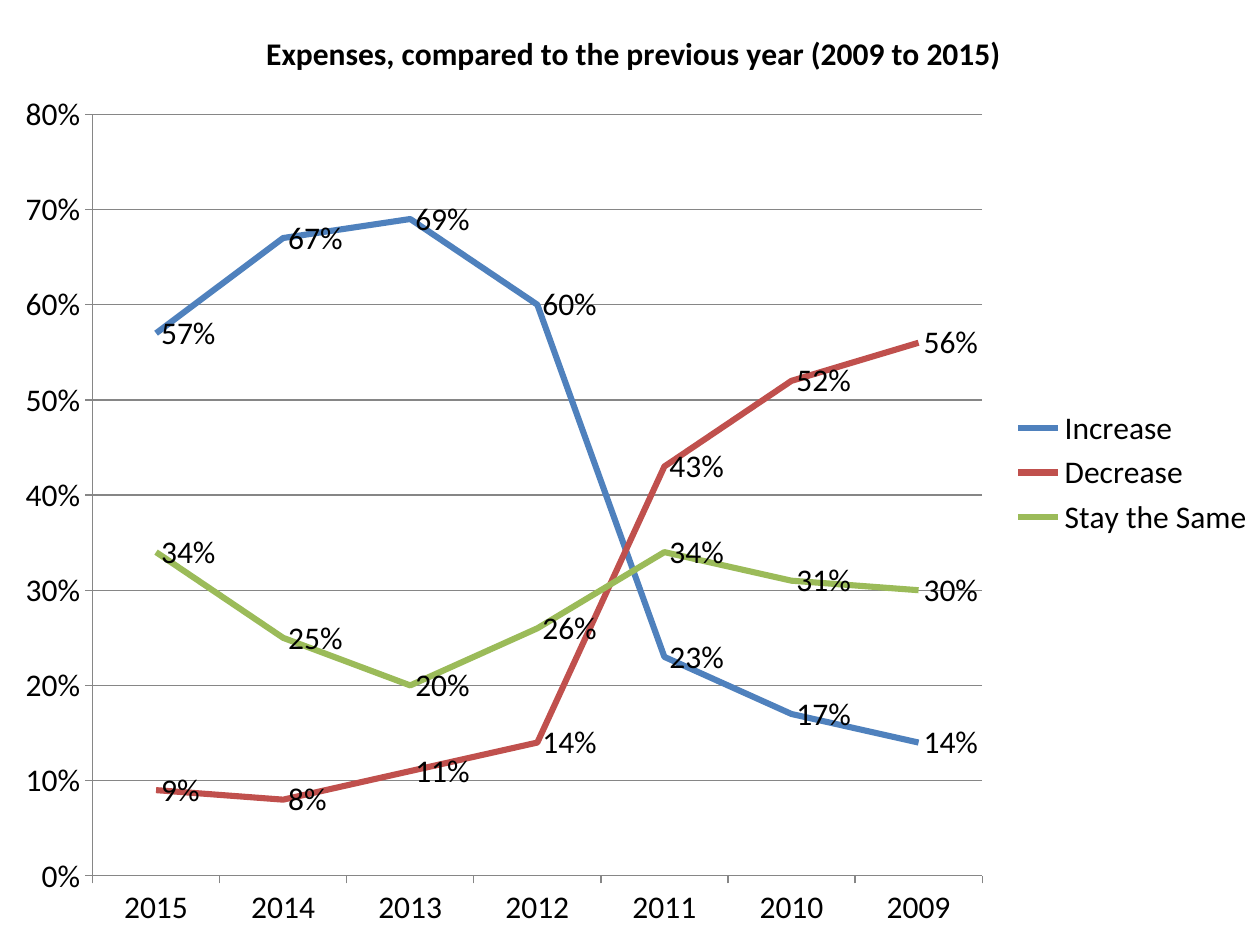
from dataclasses import dataclass
from lxml.etree import SubElement
from pptx import Presentation
from pptx.chart.data import CategoryChartData
from pptx.dml.color import RGBColor
from pptx.enum.chart import XL_CHART_TYPE, XL_LABEL_POSITION, XL_LEGEND_POSITION, XL_MARKER_STYLE, XL_TICK_MARK
from pptx.oxml.ns import qn
from pptx.util import Cm, Pt

COLORS = {
    "text": "000000",
    "axis": "868686",
    "Increase": "4F81BD",
    "Decrease": "C0504D",
    "Stay the Same": "9BBB59",
}
YEARS = [str(year) for year in range(2015, 2008, -1)]
EXPENSES = {
    "Increase": (0.57, 0.67, 0.69, 0.6, 0.23, 0.17, 0.14),
    "Decrease": (0.09, 0.08, 0.11, 0.14, 0.43, 0.52, 0.56),
    "Stay the Same": (0.34, 0.25, 0.2, 0.26, 0.34, 0.31, 0.3),
}


@dataclass
class SlideBuilder:
    """Holds the style and the current slide, and adds styled chart parts."""

    slide: object
    face: str = "Calibri"
    size: int = 18

    def style_font(self, font, bold=False):
        font.name, font.size, font.bold = self.face, Pt(self.size), bold
        font.color.rgb = RGBColor.from_string(COLORS["text"])

    def style_line(self, line, color, width):
        line.color.rgb = RGBColor.from_string(COLORS[color])
        line.width = Pt(width)

    def line_chart(self, title, categories, values, box):
        data = CategoryChartData(number_format="0%")
        data.categories = categories
        for name, points in values.items():
            data.add_series(name, points)
        chart = self.slide.shapes.add_chart(XL_CHART_TYPE.LINE, *box, data).chart
        self.style_font(chart.font)
        self.title(chart, title)
        self.legend(chart)
        self.axes(chart)
        self.series(chart.plots[0])
        self.plot_area(chart, x=0.073, y=0.121, w=0.702, h=0.806)

    def title(self, chart, text):
        chart.has_title = True
        chart.chart_title.include_in_layout = False
        heading = chart.chart_title.text_frame.paragraphs[0]
        heading.text = text
        self.style_font(heading.font, bold=True)

    def legend(self, chart):
        chart.has_legend = True
        chart.legend.position = XL_LEGEND_POSITION.RIGHT
        chart.legend.include_in_layout = False
        self.style_font(chart.legend.font)

    def axes(self, chart):
        for axis in (chart.category_axis, chart.value_axis):
            axis.major_tick_mark = XL_TICK_MARK.OUTSIDE
            axis.minor_tick_mark = XL_TICK_MARK.NONE
            self.style_font(axis.tick_labels.font)
            self.style_line(axis.format.line, "axis", 0.75)
        scale = chart.value_axis
        scale.minimum_scale, scale.maximum_scale, scale.major_unit = 0, 0.8, 0.1
        scale.tick_labels.number_format = "0%"
        scale.tick_labels.number_format_is_linked = False
        scale.has_major_gridlines = True
        self.style_line(scale.major_gridlines.format.line, "axis", 0.75)

    def series(self, plot):
        plot.vary_by_categories = False
        for trend in plot.series:
            trend.smooth = False
            trend.marker.style = XL_MARKER_STYLE.NONE
            self.style_line(trend.format.line, trend.name, 3.5)
            labels = trend.data_labels
            labels.show_value = True
            labels.number_format = "0%"
            labels.number_format_is_linked = False
            labels.position = XL_LABEL_POSITION.RIGHT
            self.style_font(labels.font)

    def plot_area(self, chart, **fractions):
        area = chart.element.find(".//" + qn("c:plotArea"))
        layout = area.find(qn("c:layout"))
        if layout is None:
            layout = SubElement(area, qn("c:layout"))
            area.insert(0, layout)
        manual = SubElement(layout, qn("c:manualLayout"))
        settings = {"layoutTarget": "inner", "xMode": "edge", "yMode": "edge", **fractions}
        for tag, value in settings.items():
            SubElement(manual, qn("c:" + tag)).set("val", str(value))


def main():
    deck = Presentation()
    deck.slide_width, deck.slide_height = Cm(25.4), Cm(19.05)
    builder = SlideBuilder(deck.slides.add_slide(deck.slide_layouts[6]))
    builder.line_chart(
        "Expenses, compared to the previous year (2009 to 2015)",
        YEARS,
        EXPENSES,
        (Cm(0), Cm(0), Cm(25.55), Cm(19.05)),
    )
    deck.save("out.pptx")


if __name__ == "__main__":
    main()
